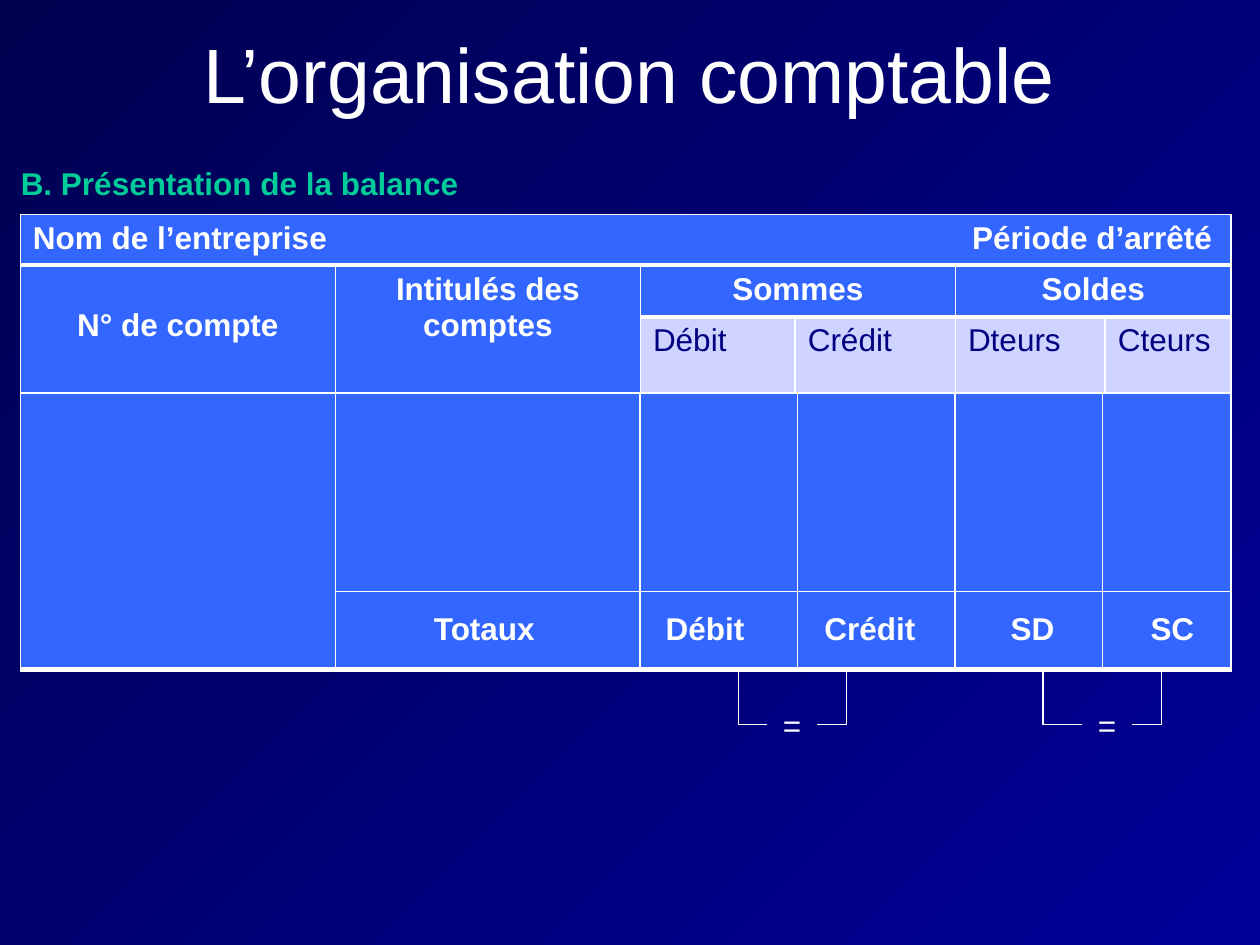
from itertools import accumulate
from lxml.etree import SubElement
from pptx import Presentation
from pptx.dml.color import RGBColor
from pptx.enum.shapes import MSO_CONNECTOR
from pptx.enum.text import MSO_ANCHOR, PP_ALIGN
from pptx.oxml.ns import qn
from pptx.util import Cm, Pt

WHITE = RGBColor(0xFF, 0xFF, 0xFF)
NAVY = RGBColor(0x00, 0x00, 0x80)
DARK = RGBColor(0x00, 0x00, 0x50)
DEEP = RGBColor(0x00, 0x00, 0x99)
BLUE = RGBColor(0x33, 0x66, 0xFF)
PALE = RGBColor(0xCE, 0xD3, 0xFF)
GREEN = RGBColor(0x00, 0xCC, 0x99)

COLS = [6.35, 6.15, 3.12, 3.23, 3.02, 2.54]


def style(para, size=18, color=WHITE, bold=False, align=PP_ALIGN.CENTER):
    para.alignment = align
    font = para.font
    font.name, font.size, font.bold = "Arial", Pt(size), bold
    font.color.rgb = color


def label(slide, box, text, wrap=True, **look):
    frame = slide.shapes.add_textbox(*map(Cm, box)).text_frame
    frame.word_wrap = wrap
    para = frame.paragraphs[0]
    para.text = text
    style(para, **look)


def set_tabs(para, stops):
    tabs = SubElement(para._p.get_or_add_pPr(), qn("a:tabLst"))
    for pos, algn in stops:
        SubElement(tabs, qn("a:tab"), pos=str(Cm(pos)), algn=algn)


def paint(cell, fill=BLUE, bottom=1):
    """Draw the white borders of a cell, then its fill."""
    props = cell._tc.get_or_add_tcPr()
    for side, width in (("L", 1), ("R", 1), ("T", 1), ("B", bottom)):
        line = SubElement(props, qn(f"a:ln{side}"), w=str(Pt(width)))
        solid = SubElement(line, qn("a:solidFill"))
        SubElement(solid, qn("a:srgbClr"), val=str(WHITE))
    cell.fill.solid()
    cell.fill.fore_color.rgb = fill


def write(cell, text, stops=(), **look):
    para = cell.text_frame.paragraphs[0]
    para.text = text
    if stops:
        set_tabs(para, stops)
    style(para, **look)


def add_grid(slide, box, rows, cols):
    table = slide.shapes.add_table(len(rows), len(cols), *map(Cm, box)).table
    table.first_row = table.horz_banding = False
    for row, height in zip(table.rows, rows):
        row.height = Cm(height)
    for col, width in zip(table.columns, cols):
        col.width = Cm(width)
    return table


def add_line(slide, start, end, kind=MSO_CONNECTOR.STRAIGHT):
    line = slide.shapes.add_connector(kind, *map(Cm, start + end))
    line.line.color.rgb = WHITE
    line.line.width = Pt(0.75)
    SubElement(line._element.spPr, qn("a:effectLst"))
    return line


def add_banner(slide, box):
    cell = add_grid(slide, box, [box[3]], [box[2]]).cell(0, 0)
    paint(cell, bottom=3)
    write(cell, "Nom de l’entreprise\tPériode d’arrêté", [(23.77, "r")],
          bold=True, align=PP_ALIGN.LEFT)


def add_header(slide, box):
    table = add_grid(slide, box, [1.03, box[3] - 1.03], COLS)
    for col in range(len(COLS)):
        group = col > 1
        paint(table.cell(0, col), bottom=3 if group else 1)
        paint(table.cell(1, col), PALE if group else BLUE)
    spans = [(0, 1, 0, "N° de compte"), (1, 1, 1, "Intitulés des comptes"),
             (2, 0, 3, "Sommes"), (4, 0, 5, "Soldes")]
    for col, row, last, text in spans:
        table.cell(0, col).merge(table.cell(row, last))
        write(table.cell(0, col), text, bold=True)
    table.cell(0, 0).margin_top = Cm(0.85)
    for col, text in enumerate(["Débit", "Crédit", "Dteurs", "Cteurs"], 2):
        write(table.cell(1, col), text, color=NAVY, align=PP_ALIGN.LEFT)


def add_body(slide, box):
    left, top, width, height = box
    cell = add_grid(slide, box, [height], [width]).cell(0, 0)
    paint(cell, bottom=3)
    stops = [(pos, "ctr") for pos in (9.1, 13.55, 16.87, 20.15, 22.97)]
    write(cell, "\tTotaux\tDébit\tCrédit\tSD\tSC", stops,
          bold=True, align=PP_ALIGN.LEFT)
    cell.vertical_anchor = MSO_ANCHOR.BOTTOM
    cell.margin_bottom = Cm(0.45)
    # Column rules and the totals rule
    for pos in list(accumulate([6.35, 6.14, 3.18, 3.17, 2.98])):
        add_line(slide, (left + pos, top), (left + pos, top + height))
    rule = top + height - 1.58
    add_line(slide, (left + COLS[0], rule), (left + width, rule))


def add_equal(slide, box, reach):
    """An equals sign tied to two totals, at reach left and right of it."""
    left, top, width, height = box
    low = top + 1.11
    label(slide, (left, top + 0.6, width, height - 0.6), "=")
    for side, length in ((left, -reach[0]), (left + width, reach[1])):
        bend = add_line(slide, (side, low), (side + length, top),
                        MSO_CONNECTOR.ELBOW)
        bend._element.spPr.prstGeom.set("prst", "bentConnector2")


def main():
    deck = Presentation()
    deck.slide_width, deck.slide_height = Cm(25.4), Cm(19.05)
    slide = deck.slides.add_slide(deck.slide_layouts[6])

    # Background
    fill = slide.background.fill
    fill.gradient()
    fill.gradient_angle = 315
    for stop, color in zip(fill.gradient_stops, (DARK, DEEP)):
        stop.color.rgb = color

    # Headings
    label(slide, (3.76, 0.41, 17.86, 2.13), "L’organisation comptable",
          wrap=False, size=44)
    label(slide, (0.17, 3.18, 9.8, 1.02), "B. Présentation de la balance",
          color=GREEN, bold=True, align=PP_ALIGN.LEFT)

    # Balance sheet, from top to bottom
    left, width = 0.41, sum(COLS)
    add_banner(slide, (left, 4.32, width, 1.03))
    add_header(slide, (left, 5.36, width, 2.56))
    add_body(slide, (left, 7.92, width, 5.58))

    # Equalities under the totals
    add_equal(slide, (15.47, 13.5, 1, 1.62), (0.58, 0.6))
    add_equal(slide, (21.82, 13.5, 1, 1.62), (0.79, 0.6))

    deck.save("out.pptx")


if __name__ == "__main__":
    main()
